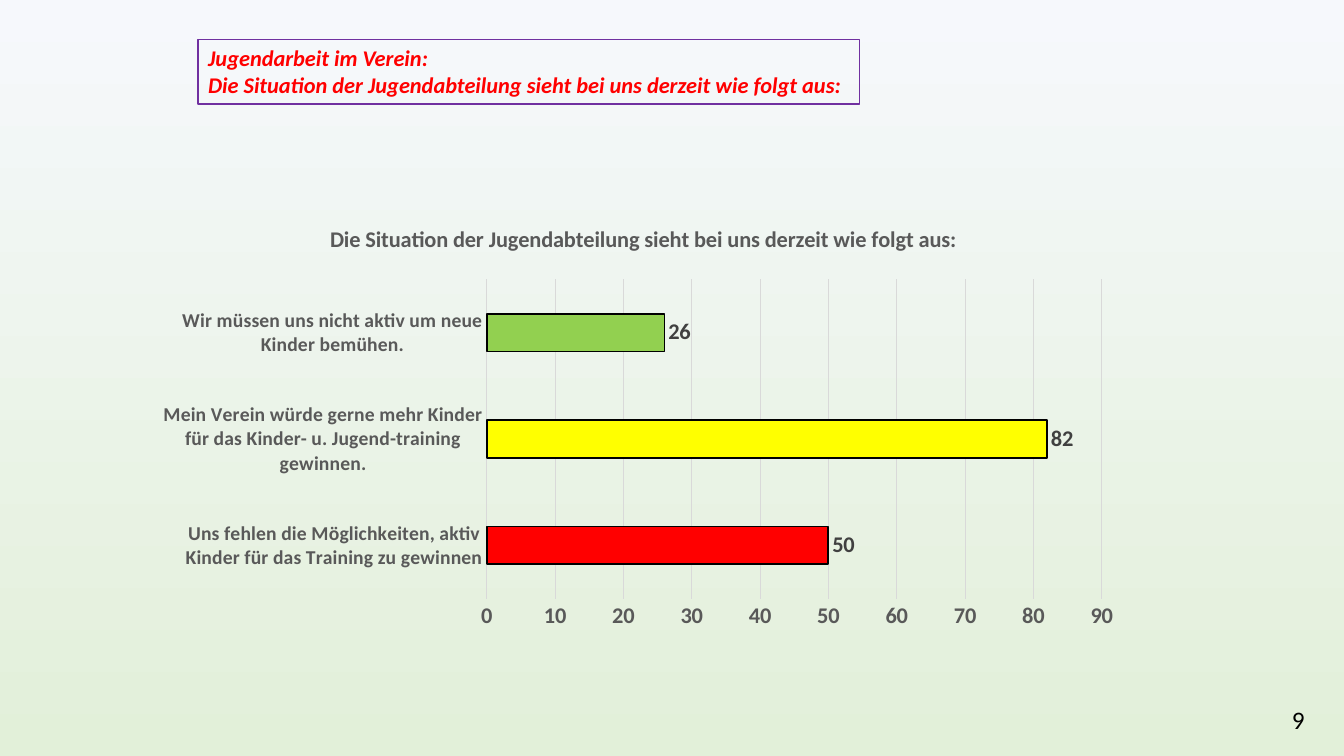
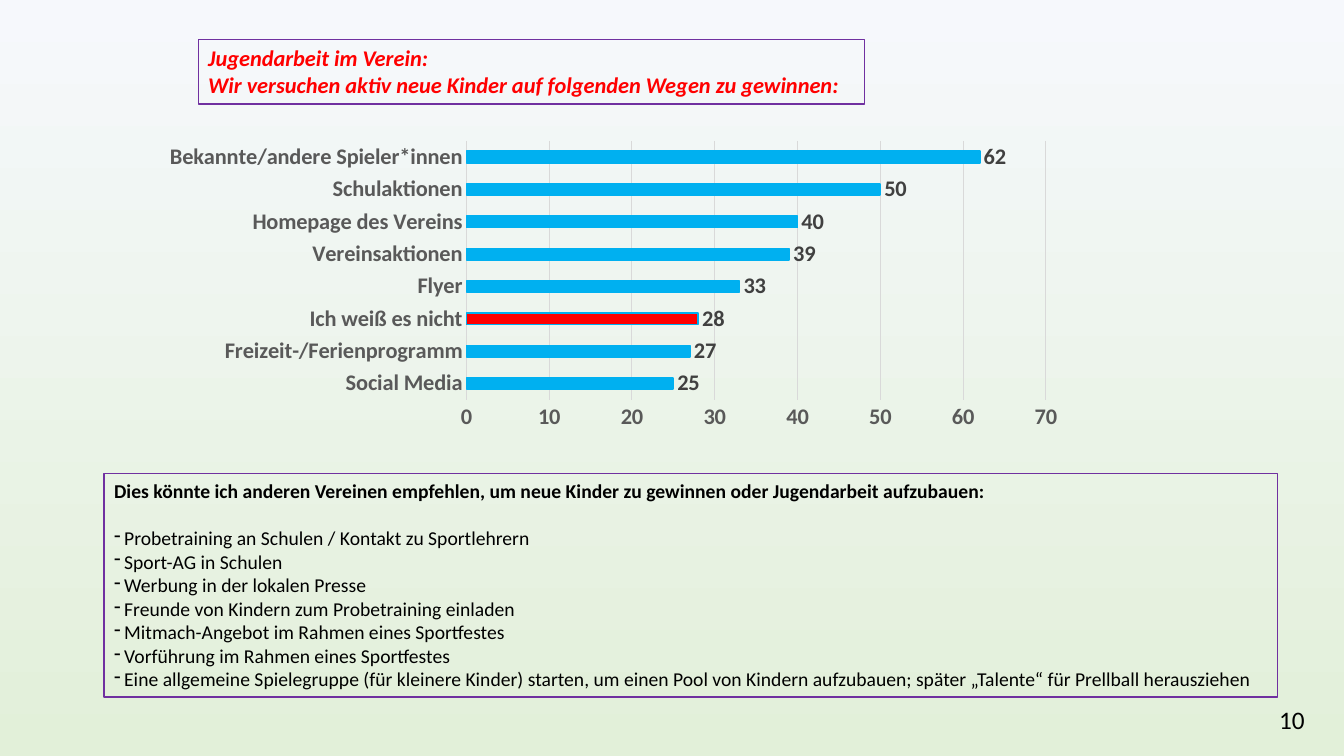
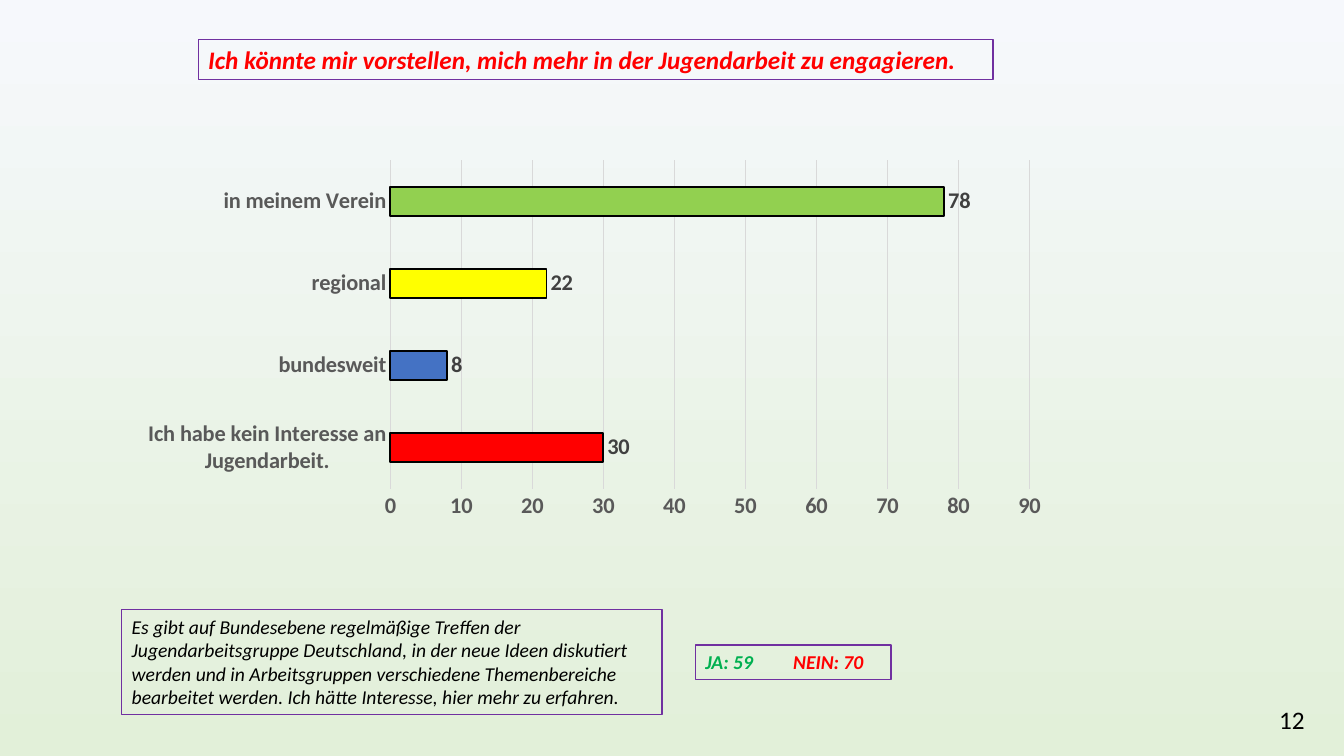
from dataclasses import dataclass

import lxml.etree
import pptx
import pptx.chart.chart
import pptx.chart.data
import pptx.dml.color
import pptx.enum.chart
import pptx.enum.shapes
import pptx.enum.text
import pptx.oxml.ns
import pptx.presentation
import pptx.slide
import pptx.text.text
import pptx.util

RGBColor = pptx.dml.color.RGBColor
SKY = RGBColor(0xF6, 0xF8, 0xFC)
MEADOW = RGBColor(0xE2, 0xF0, 0xD9)
PURPLE = RGBColor(0x70, 0x30, 0xA0)
RED = RGBColor(0xFF, 0x00, 0x00)
YELLOW = RGBColor(0xFF, 0xFF, 0x00)
LIME = RGBColor(0x92, 0xD0, 0x50)
GREEN = RGBColor(0x00, 0xB0, 0x50)
BLUE = RGBColor(0x44, 0x72, 0xC4)
CYAN = RGBColor(0x00, 0xB0, 0xF0)
BLACK = RGBColor(0x00, 0x00, 0x00)
DARK_GREY = RGBColor(0x40, 0x40, 0x40)
GREY = RGBColor(0x59, 0x59, 0x59)
LIGHT_GREY = RGBColor(0xD9, 0xD9, 0xD9)

FONT = "Calibri"
SLIDE_WIDTH = pptx.util.Inches(13.333)
SLIDE_HEIGHT = pptx.util.Inches(7.5)
COLUMNS, ROWS = 160, 90
PLOT_SHARES = {"x": 0.337, "y": 0.171, "w": 0.64, "h": 0.743}


@dataclass(frozen=True)
class Area:
    column: float
    row: float
    columns: float
    rows: float

    def lengths(self) -> tuple[int, int, int, int]:
        across, down = SLIDE_WIDTH / COLUMNS, SLIDE_HEIGHT / ROWS
        return (round(self.column * across), round(self.row * down),
                round(self.columns * across), round(self.rows * down))


@dataclass(frozen=True)
class Span:
    text: str
    size: float = 14
    color: RGBColor = BLACK
    bold: bool = False
    italic: bool = False


@dataclass(frozen=True)
class Para:
    spans: tuple[Span, ...]
    bullet: str = ""
    space_before: float = 0
    tab: float = 0


@dataclass(frozen=True)
class Note:
    area: Area
    paras: tuple[Para, ...]


@dataclass(frozen=True)
class Bar:
    category: str
    value: int
    color: RGBColor


@dataclass(frozen=True)
class BarChart:
    area: Area
    bars: tuple[Bar, ...]
    outline: RGBColor = BLACK
    title: str = ""
    category_size: float = 16


@dataclass(frozen=True)
class Page:
    number: int
    heading: Note
    chart: BarChart
    notes: tuple[Note, ...] = ()


def heading(columns: float, rows: float, size: float, *lines: str) -> Note:
    return Note(Area(23.6, 4.7, columns, rows), tuple(
        Para((Span(line, size, RED, True, True),)) for line in lines))


TIPS = (
    "Probetraining an Schulen / Kontakt zu Sportlehrern",
    "Sport-AG in Schulen",
    "Werbung in der lokalen Presse",
    "Freunde von Kindern zum Probetraining einladen",
    "Mitmach-Angebot im Rahmen eines Sportfestes",
    "Vorführung im Rahmen eines Sportfestes",
    "Eine allgemeine Spielegruppe (für kleinere Kinder) starten, um einen Pool von "
    "Kindern aufzubauen; später „Talente“ für Prellball herausziehen",
)

PAGES = (
    Page(
        9,
        heading(78.7, 7.7, 16, "Jugendarbeit im Verein:",
                "Die Situation der Jugendabteilung sieht bei uns derzeit wie folgt aus:"),
        BarChart(
            Area(19.4, 24.5, 114.4, 51.2),
            (
                Bar("Uns fehlen die Möglichkeiten, aktiv Kinder für das Training zu gewinnen",
                    50, RED),
                Bar("Mein Verein würde gerne mehr Kinder für das Kinder- u. Jugend-training "
                    "gewinnen.", 82, YELLOW),
                Bar("Wir müssen uns nicht aktiv um neue Kinder bemühen.", 26, LIME),
            ),
            title="Die Situation der Jugendabteilung sieht bei uns derzeit wie folgt aus:",
            category_size=14,
        ),
    ),
    Page(
        10,
        heading(79.3, 7.7, 16, "Jugendarbeit im Verein:",
                "Wir versuchen aktiv neue Kinder auf folgenden Wegen zu gewinnen:"),
        BarChart(
            Area(19.2, 9.7, 107.8, 41.6),
            (
                Bar("Social Media", 25, CYAN),
                Bar("Freizeit-/Ferienprogramm", 27, CYAN),
                Bar("Ich weiß es nicht", 28, RED),
                Bar("Flyer", 33, CYAN),
                Bar("Vereinsaktionen", 39, CYAN),
                Bar("Homepage des Vereins", 40, CYAN),
                Bar("Schulaktionen", 50, CYAN),
                Bar("Bekannte/andere Spieler*innen", 62, CYAN),
            ),
            outline=CYAN,
        ),
        (
            Note(Area(12.4, 56.4, 139.7, 26.6), (
                Para((Span("Dies könnte ich anderen Vereinen empfehlen, um neue Kinder zu "
                           "gewinnen oder Jugendarbeit aufzubauen:", bold=True),)),
                *(Para((Span(tip),), "-", 0 if index else 17)
                  for index, tip in enumerate(TIPS)),
            )),
        ),
    ),
    Page(
        12,
        heading(94.6, 4.8, 18,
                "Ich könnte mir vorstellen, mich mehr in der Jugendarbeit zu engagieren."),
        BarChart(
            Area(6.4, 10.1, 118.9, 52.6),
            (
                Bar("Ich habe kein Interesse an Jugendarbeit.", 30, RED),
                Bar("bundesweit", 8, BLUE),
                Bar("regional", 22, YELLOW),
                Bar("in meinem Verein", 78, LIME),
            ),
        ),
        (
            Note(Area(14.5, 72.6, 64.3, 12.5), (
                Para((Span("Es gibt auf Bundesebene regelmäßige Treffen der "
                           "Jugendarbeitsgruppe Deutschland, in der neue Ideen diskutiert "
                           "werden und in Arbeitsgruppen verschiedene Themenbereiche "
                           "bearbeitet werden. Ich hätte Interesse, hier mehr zu erfahren.",
                           italic=True),)),
            )),
            Note(Area(82.8, 76.8, 23.3, 4.1), (
                Para((Span("JA: 59\t", 14, GREEN, True, True),
                      Span("NEIN: 70", 14, RED, True, True)), tab=0.87),
            )),
        ),
    ),
)


def add_element(parent: lxml.etree._Element, tag: str, **attributes: str) -> lxml.etree._Element:
    return lxml.etree.SubElement(parent, pptx.oxml.ns.qn(tag), attributes)


def style_font(font: pptx.text.text.Font, size: float, color: RGBColor,
               bold: bool = False, italic: bool = False) -> None:
    font.name = FONT
    font.size = pptx.util.Pt(size)
    font.color.rgb = color
    font.bold = bold
    font.italic = italic


def write_para(para: pptx.text.text._Paragraph, content: Para) -> None:
    properties = para._p.get_or_add_pPr()
    if content.bullet:
        indent = pptx.util.Inches(0.1)
        properties.set("marL", str(indent))
        properties.set("indent", str(-indent))
        add_element(properties, "a:buChar", char=content.bullet)
    if content.tab:
        tabs = add_element(properties, "a:tabLst")
        add_element(tabs, "a:tab", pos=str(pptx.util.Inches(content.tab)), algn="l")
    if content.space_before:
        para.space_before = pptx.util.Pt(content.space_before)
    for span in content.spans:
        run = para.add_run()
        run.text = span.text
        style_font(run.font, span.size, span.color, span.bold, span.italic)


def add_note(page: pptx.slide.Slide, note: Note) -> None:
    box = page.shapes.add_shape(pptx.enum.shapes.MSO_SHAPE.RECTANGLE, *note.area.lengths())
    box.shadow.inherit = False
    box.fill.background()
    box.line.color.rgb = PURPLE
    box.line.width = pptx.util.Pt(1)
    frame = box.text_frame
    frame.word_wrap = True
    frame.vertical_anchor = pptx.enum.text.MSO_ANCHOR.TOP
    for index, content in enumerate(note.paras):
        para = frame.add_paragraph() if index else frame.paragraphs[0]
        para.alignment = pptx.enum.text.PP_ALIGN.LEFT
        write_para(para, content)


def add_page_number(page: pptx.slide.Slide, number: int) -> None:
    box = page.shapes.add_textbox(*Area(120.5, 83.3, 36, 4.8).lengths())
    frame = box.text_frame
    frame.word_wrap = True
    frame.vertical_anchor = pptx.enum.text.MSO_ANCHOR.MIDDLE
    para = frame.paragraphs[0]
    para.alignment = pptx.enum.text.PP_ALIGN.RIGHT
    write_para(para, Para((Span(str(number), 18),)))


def place_plot(chart: pptx.chart.chart.Chart) -> None:
    plot_area = chart.element.find(".//" + pptx.oxml.ns.qn("c:plotArea"))
    for old in plot_area.findall(pptx.oxml.ns.qn("c:layout")):
        plot_area.remove(old)
    layout = add_element(plot_area, "c:layout")
    plot_area.insert(0, layout)
    manual = add_element(layout, "c:manualLayout")
    add_element(manual, "c:layoutTarget", val="inner")
    for side in ("x", "y"):
        add_element(manual, f"c:{side}Mode", val="edge")
    for side, share in PLOT_SHARES.items():
        add_element(manual, f"c:{side}", val=str(share))


def style_axes(chart: pptx.chart.chart.Chart, category_size: float) -> None:
    categories, values = chart.category_axis, chart.value_axis
    for axis, size in ((categories, category_size), (values, 16)):
        axis.major_tick_mark = axis.minor_tick_mark = pptx.enum.chart.XL_TICK_MARK.NONE
        style_font(axis.tick_labels.font, size, GREY, True)
    values.has_major_gridlines = True
    values.minimum_scale = 0
    values.major_unit = 10
    for line in (categories.format.line, values.major_gridlines.format.line):
        line.color.rgb = LIGHT_GREY
        line.width = pptx.util.Pt(0.75)
    values.format.line.fill.background()


def add_bar_chart(page: pptx.slide.Slide, content: BarChart) -> None:
    data = pptx.chart.data.CategoryChartData()
    data.categories = [bar.category for bar in content.bars]
    data.add_series("Series 1", [bar.value for bar in content.bars])
    chart = page.shapes.add_chart(
        pptx.enum.chart.XL_CHART_TYPE.BAR_CLUSTERED, *content.area.lengths(), data).chart
    style_font(chart.font, 16, BLACK, True)
    chart.has_legend = False
    chart.has_title = bool(content.title)
    if content.title:
        span = chart.chart_title.text_frame.paragraphs[0].add_run()
        span.text = content.title
        style_font(span.font, 16, GREY, True)
    place_plot(chart)
    style_axes(chart, content.category_size)

    plot = chart.plots[0]
    plot.gap_width = 182
    plot.vary_by_categories = False
    plot.has_data_labels = True
    labels = plot.data_labels
    labels.show_value = True
    labels.position = pptx.enum.chart.XL_LABEL_POSITION.OUTSIDE_END
    style_font(labels.font, 16, DARK_GREY, True)
    for index, bar in enumerate(content.bars):
        look = plot.series[0].points[index].format
        look.fill.solid()
        look.fill.fore_color.rgb = bar.color
        look.line.color.rgb = content.outline
        look.line.width = pptx.util.Pt(1.25)


def style_master(deck: pptx.presentation.Presentation) -> None:
    fill = deck.slide_master.background.fill
    fill.gradient()
    fill.gradient_angle = 270
    for stop, color in zip(fill.gradient_stops, (SKY, MEADOW)):
        stop.color.rgb = color


def add_page(deck: pptx.presentation.Presentation, content: Page) -> None:
    page = deck.slides.add_slide(deck.slide_layouts[6])
    for note in (content.heading, *content.notes):
        add_note(page, note)
    add_page_number(page, content.number)
    add_bar_chart(page, content.chart)


def main() -> None:
    deck = pptx.Presentation()
    deck.slide_width = SLIDE_WIDTH
    deck.slide_height = SLIDE_HEIGHT
    style_master(deck)
    for content in PAGES:
        add_page(deck, content)
    deck.save("out.pptx")


if __name__ == "__main__":
    main()
